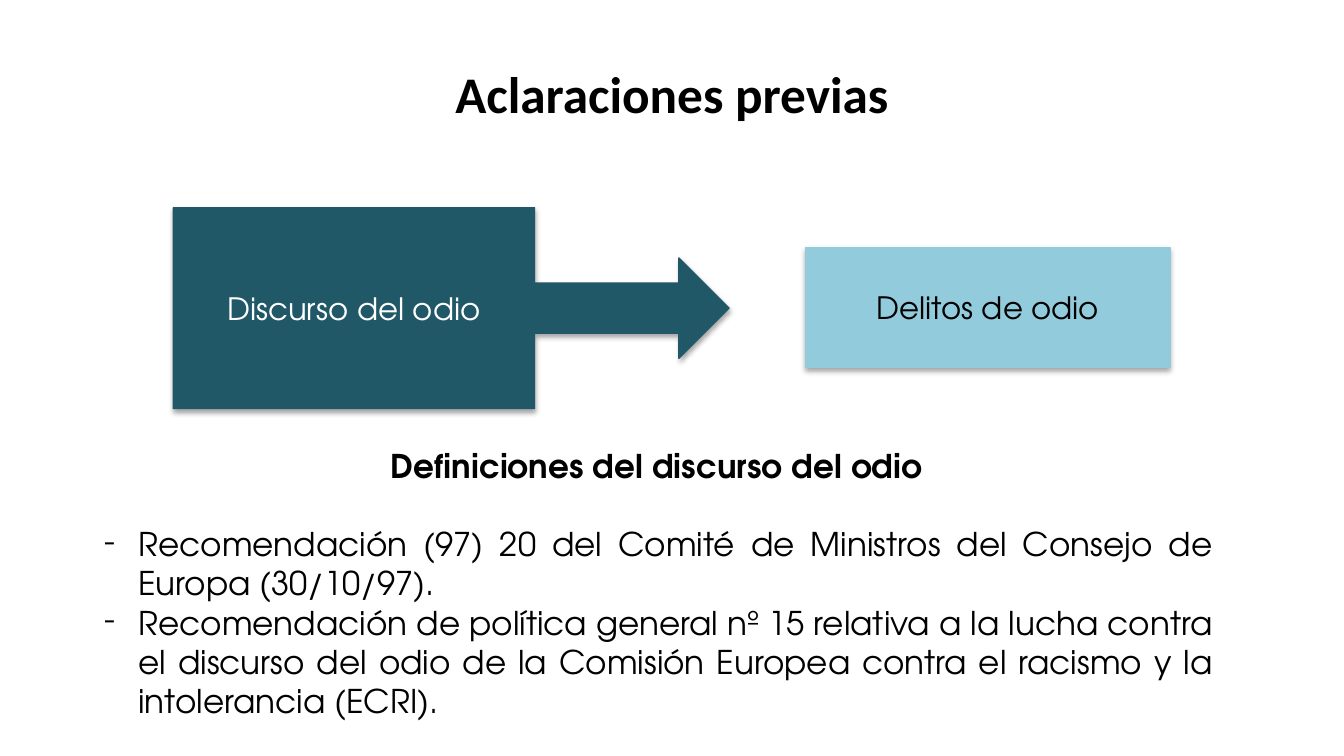
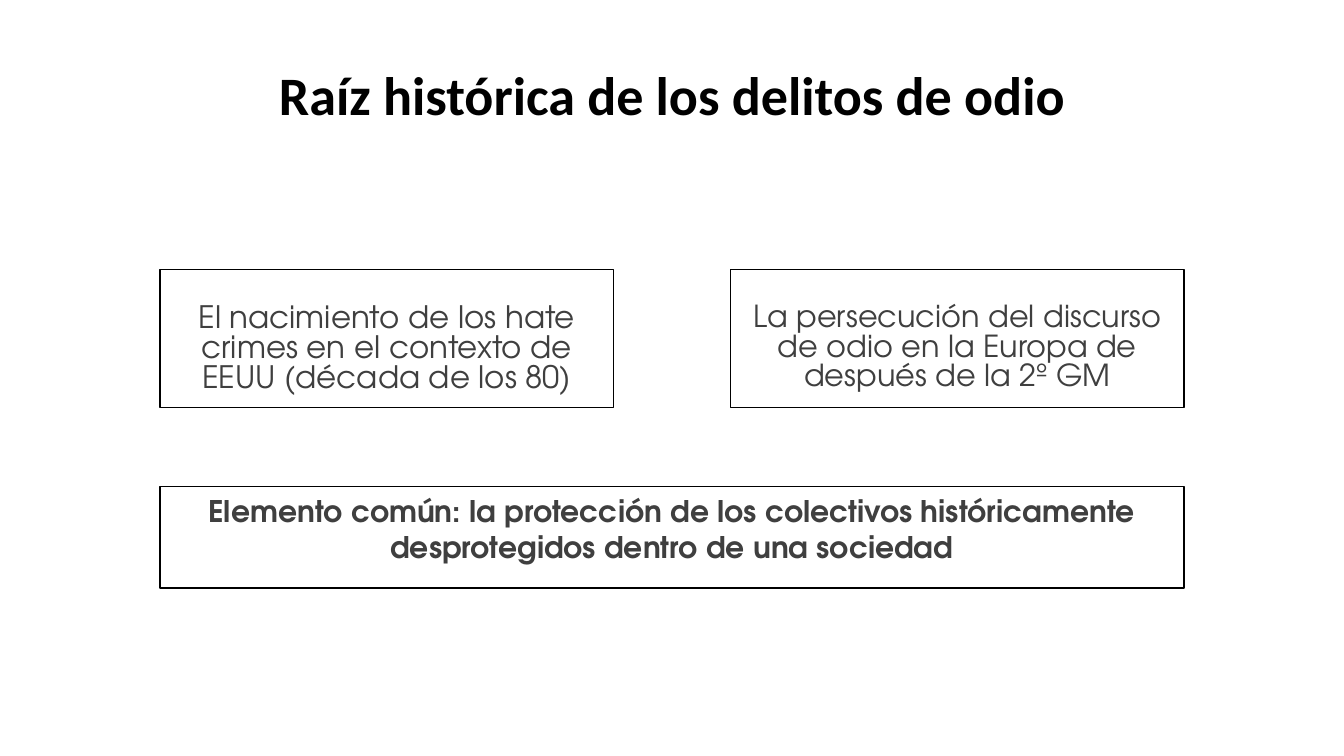
from lxml.etree import SubElement
from pptx import Presentation
from pptx.dml.color import RGBColor
from pptx.enum.shapes import MSO_SHAPE as Preset
from pptx.enum.text import MSO_ANCHOR as Anchor, MSO_AUTO_SIZE as AutoSize, PP_ALIGN as Align
from pptx.oxml.ns import qn
from pptx.util import Pt

BLACK = RGBColor(0x00, 0x00, 0x00)
WHITE = RGBColor(0xFF, 0xFF, 0xFF)
GRAY = RGBColor(0x3F, 0x3F, 0x3F)
TEAL = RGBColor(0x20, 0x58, 0x67)
SKY = RGBColor(0x92, 0xCC, 0xDC)
TITLE_FONT, BODY_FONT = "Calibri", "TeX Gyre Adventor"
LINE_WIDTH = 1.38
INSET_X, INSET_Y = 13, 6.5
TITLE_PLACE = (72, 32.4, 1296, 135.4)

CONCEPTS = [
    ("Discurso del odio", Preset.RIGHT_ARROW_CALLOUT, (185.8, 222.5, 595.4, 215.3), TEAL, WHITE),
    ("Delitos de odio", Preset.RECTANGLE, (863.3, 265, 390.2, 128.9), SKY, BLACK),
]
CALLOUT_ADJUSTMENTS = (0.25, 0.25, 0.25, 0.65)

DEFINITIONS_PLACE = (94.3, 470.9, 1219, 310.3)
DEFINITIONS_HEADING = "Definiciones del discurso del odio"
DEFINITIONS = [
    "Recomendación (97) 20 del Comité de Ministros del Consejo de Europa (30/10/97).",
    "Recomendación de política general nº 15 relativa a la lucha contra el discurso del odio "
    "de la Comisión Europea contra el racismo y la intolerancia (ECRI).",
]

ROOTS = [
    ("El nacimiento de los hate crimes en el contexto de EEUU (década de los 80)", 33.1),
    ("La persecución del discurso de odio en la Europa de después de la 2º GM", 32.5),
]
COMMON = ("Elemento común: la protección de los colectivos históricamente "
          "desprotegidos dentro de una sociedad")
FRAME_LEFT, FRAME_WIDTH = 171.4, 1097.3
ROOT_TOP, ROOT_WIDTH, ROOT_HEIGHT = 288.7, 486, 147.6
COMMON_TOP, COMMON_HEIGHT = 521.3, 108.7


def points(place):
    return [Pt(length) for length in place]


def set_frame(frame, anchor, top_inset=INSET_Y):
    frame.word_wrap = True
    frame.auto_size = AutoSize.NONE
    frame.vertical_anchor = anchor
    frame.margin_left = frame.margin_right = Pt(INSET_X)
    frame.margin_top, frame.margin_bottom = Pt(top_inset), Pt(INSET_Y)


def write(para, text, size, color, bold=False, font=BODY_FONT, align=Align.CENTER):
    para.alignment = align
    span = para.add_run()
    span.text = text
    span.font.name, span.font.size, span.font.bold = font, Pt(size), bold
    span.font.color.rgb = color


def add_page(deck, title, size):
    page = deck.slides.add_slide(deck.slide_layouts[5])
    heading = page.shapes.title
    heading.left, heading.top, heading.width, heading.height = points(TITLE_PLACE)
    set_frame(heading.text_frame, Anchor.MIDDLE)
    write(heading.text_frame.paragraphs[0], title, size, BLACK, True, TITLE_FONT)
    return page


def add_box(page, preset, place, line, fill=None):
    box = page.shapes.add_shape(preset, *points(place))
    if fill is None:
        box.fill.background()
    else:
        box.fill.solid()
        box.fill.fore_color.rgb = fill
    box.line.color.rgb = line
    box.line.width = Pt(LINE_WIDTH)
    box.shadow.inherit = False
    return box


def add_shadow(box):
    effects = box._element.spPr.find(qn("a:effectLst"))
    shadow = SubElement(effects, qn("a:outerShdw"), blurRad=str(Pt(5.8)), dist=str(Pt(3.3)),
                        dir="5400000", rotWithShape="0")
    color = SubElement(shadow, qn("a:srgbClr"), val=str(BLACK))
    SubElement(color, qn("a:alpha"), val="35000")


def add_dash(para):
    props = para._p.get_or_add_pPr()
    props.set("marL", str(Pt(41)))
    props.set("indent", str(Pt(-36.7)))
    color = SubElement(props, qn("a:buClr"))
    SubElement(color, qn("a:srgbClr"), val=str(BLACK))
    SubElement(props, qn("a:buFont"), typeface=BODY_FONT)
    SubElement(props, qn("a:buChar"), char="-")


def add_clarifications(deck):
    page = add_page(deck, "Aclaraciones previas", 55)
    for text, preset, place, fill, color in CONCEPTS:
        box = add_box(page, preset, place, fill, fill)
        add_shadow(box)
        if preset == Preset.RIGHT_ARROW_CALLOUT:
            for index, value in enumerate(CALLOUT_ADJUSTMENTS):
                box.adjustments[index] = value
        set_frame(box.text_frame, Anchor.MIDDLE)
        write(box.text_frame.paragraphs[0], text, 33, color)

    frame = page.shapes.add_textbox(*points(DEFINITIONS_PLACE)).text_frame
    set_frame(frame, Anchor.TOP)
    frame.auto_size = AutoSize.SHAPE_TO_FIT_TEXT
    heading = frame.paragraphs[0]
    heading.space_after = Pt(42)
    write(heading, DEFINITIONS_HEADING, 35, BLACK, True)
    for text in DEFINITIONS:
        para = frame.add_paragraph()
        write(para, text, 35, BLACK, align=Align.JUSTIFY)
        add_dash(para)


def add_roots(deck):
    page = add_page(deck, "Raíz histórica de los delitos de odio", 58)
    step = FRAME_WIDTH - ROOT_WIDTH
    for column, (text, size) in enumerate(ROOTS):
        place = (FRAME_LEFT + column * step, ROOT_TOP, ROOT_WIDTH, ROOT_HEIGHT)
        frame = add_box(page, Preset.RECTANGLE, place, BLACK).text_frame
        set_frame(frame, Anchor.TOP, INSET_Y + 0.96 * size)
        frame.paragraphs[0].line_spacing = 0.8
        write(frame.paragraphs[0], text, size, GRAY)

    place = (FRAME_LEFT, COMMON_TOP, FRAME_WIDTH, COMMON_HEIGHT)
    frame = add_box(page, Preset.RECTANGLE, place, BLACK).text_frame
    set_frame(frame, Anchor.TOP)
    write(frame.paragraphs[0], COMMON, 31.9, GRAY, True)


def main():
    """Build the two slides on hate speech and hate crimes."""
    deck = Presentation()
    deck.slide_width, deck.slide_height = Pt(1440), Pt(810)
    add_clarifications(deck)
    add_roots(deck)
    deck.save("out.pptx")


if __name__ == "__main__":
    main()
